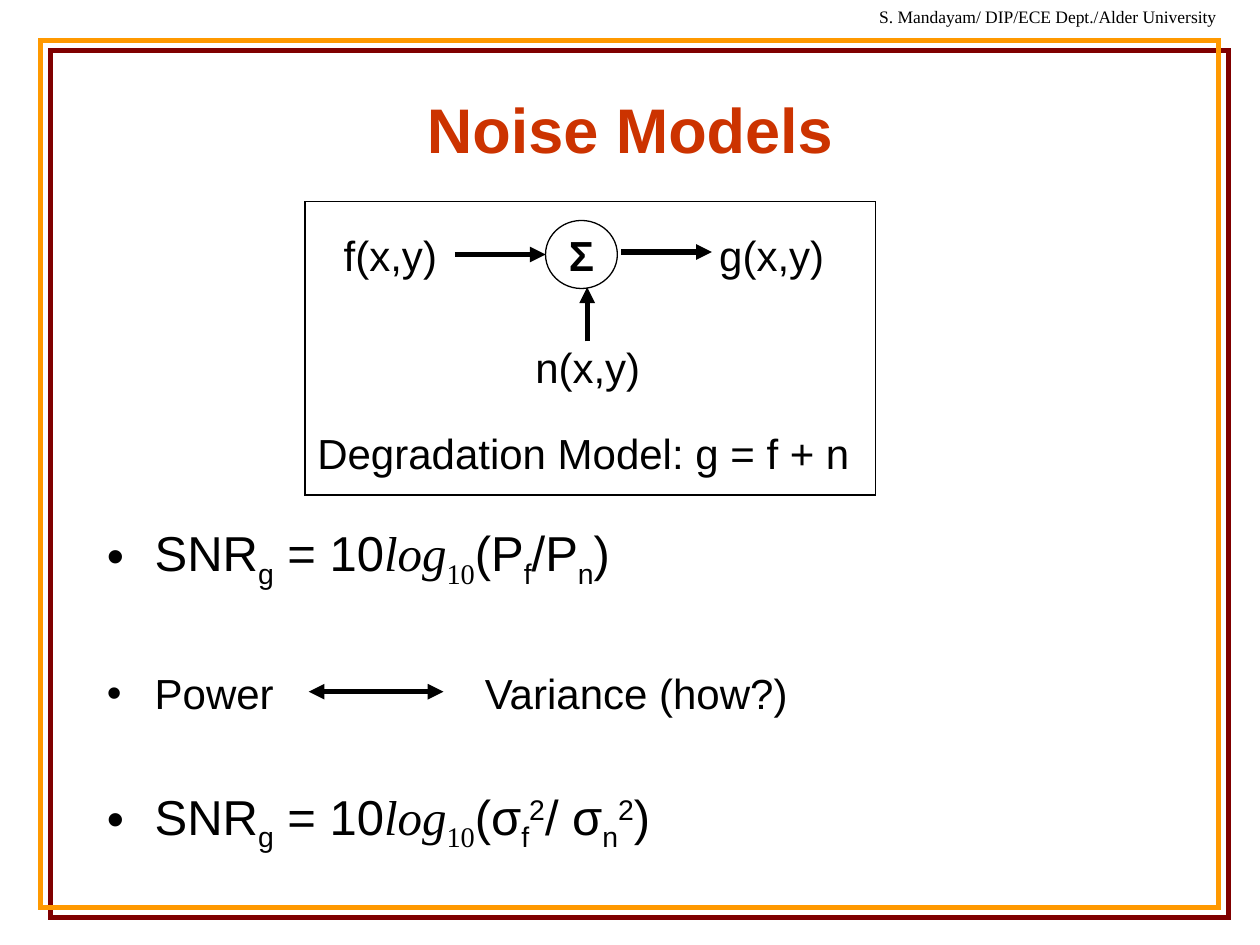
from dataclasses import dataclass
from typing import NamedTuple

from lxml import etree
from pptx import Presentation
from pptx.dml.color import RGBColor
from pptx.enum.shapes import MSO_CONNECTOR, MSO_SHAPE
from pptx.enum.text import MSO_ANCHOR, PP_ALIGN
from pptx.oxml.ns import qn
from pptx.util import Inches, Pt

STRAIGHT = MSO_CONNECTOR.STRAIGHT
RECTANGLE, OVAL = MSO_SHAPE.RECTANGLE, MSO_SHAPE.OVAL
TOP, MIDDLE = MSO_ANCHOR.TOP, MSO_ANCHOR.MIDDLE
LEFT, CENTER = PP_ALIGN.LEFT, PP_ALIGN.CENTER


@dataclass(frozen=True)
class Theme:
    ink: str = "000000"
    title: str = "CC3300"
    frame: str = "FF9900"
    frame_shadow: str = "800000"
    sans: str = "Arial"
    serif: str = "Times New Roman"
    header_size: int = 10
    label_size: int = 24
    formula_size: int = 28
    title_size: int = 36
    thin: float = 0.75
    thick: float = 3


THEME = Theme()


class Box(NamedTuple):
    left: float
    top: float
    width: float
    height: float


class Label(NamedTuple):
    text: str
    box: Box


class Arrow(NamedTuple):
    start: tuple[float, float]
    end: tuple[float, float]
    both_ends: bool = False


class Span(NamedTuple):
    text: str
    baseline: int = 0
    math: bool = False


class Bullet(NamedTuple):
    spans: list[Span]
    size: int
    space_before: float


def lengths(box: Box) -> list[int]:
    return [Inches(value) for value in box]


def add_span(para, text: str, *, size: float, color: str = THEME.ink, font: str = THEME.sans,
             bold: bool = False, italic: bool = False, baseline: int = 0) -> None:
    span = para.add_run()
    span.text = text
    span.font.size = Pt(size)
    span.font.name = font
    span.font.bold = bold
    span.font.italic = italic
    span.font.color.rgb = RGBColor.from_string(color)
    if baseline:
        span.font._element.set("baseline", str(baseline * 1000))


def add_text(page, text: str, box: Box, *, align=LEFT, anchor=TOP, wrap: bool = False, **style) -> None:
    frame = page.shapes.add_textbox(*lengths(box)).text_frame
    frame.word_wrap = wrap
    frame.vertical_anchor = anchor
    para = frame.paragraphs[0]
    para.alignment = align
    add_span(para, text, **style)


def add_outline(page, kind, box: Box, color: str, width: float):
    shape = page.shapes.add_shape(kind, *lengths(box))
    shape.shadow.inherit = False
    shape.fill.background()
    shape.line.color.rgb = RGBColor.from_string(color)
    shape.line.width = Pt(width)
    outline = shape._element.spPr.find(qn("a:ln"))
    etree.SubElement(outline, qn("a:miter"), lim="800000")
    return shape


def add_arrow(page, arrow: Arrow) -> None:
    line = page.shapes.add_connector(
        STRAIGHT, *[Inches(value) for value in arrow.start + arrow.end])
    line.line.color.rgb = RGBColor.from_string(THEME.ink)
    line.line.width = Pt(THEME.thick)
    properties = line._element.spPr
    outline = properties.find(qn("a:ln"))
    for tag in ("a:headEnd", "a:tailEnd") if arrow.both_ends else ("a:tailEnd",):
        etree.SubElement(outline, qn(tag), type="triangle")
    etree.SubElement(properties, qn("a:effectLst"))


def add_bullet(para, bullet: Bullet) -> None:
    para.space_before = Pt(bullet.space_before)
    properties = para._p.get_or_add_pPr()
    properties.set("marL", str(Inches(0.38)))
    properties.set("indent", str(Inches(-0.38)))
    etree.SubElement(properties, qn("a:buFont"), typeface=THEME.sans)
    etree.SubElement(properties, qn("a:buChar"), char="•")
    tabs = etree.SubElement(properties, qn("a:tabLst"))
    for stop in TAB_STOPS:
        etree.SubElement(tabs, qn("a:tab"), pos=str(Inches(stop)), algn="l")
    for span in bullet.spans:
        add_span(para, span.text, size=bullet.size, baseline=span.baseline, italic=span.math and not span.baseline,
                 font=THEME.serif if span.math else THEME.sans)


def snr_formula(ratio: list[Span]) -> list[Span]:
    return [Span("SNR"), Span("g", SUB), Span(" = 10"),
            Span("log", math=True), Span("10", SUB, math=True), *ratio, Span(")")]


SUB, SUPER = -25, 30
TAB_STOPS = (2, 3)

FRAME = Box(0.32, 0.32, 9.35, 6.88)
SHADOW_OFFSET = 0.08
SUM_NODE = Box(4.33, 1.75, 0.57, 0.54)
MODEL_BORDER = Box(2.42, 1.6, 4.53, 2.33)

LABELS = [
    Label("f(x,y)", Box(2.63, 1.77, 0.94, 0.5)),
    Label("g(x,y)", Box(5.61, 1.77, 1.03, 0.5)),
    Label("n(x,y)", Box(4.15, 2.66, 1.03, 0.5)),
    Label("Degradation Model: g = f + n", Box(2.42, 3.34, 4.43, 0.5)),
]
ARROWS = [
    Arrow((3.61, 2.02), (4.33, 2.02)),
    Arrow((4.66, 2.71), (4.66, 2.28)),
    Arrow((4.93, 2), (5.65, 2)),
    Arrow((2.45, 5.49), (3.52, 5.49), both_ends=True),
]
POWER_RATIO = [Span("(P"), Span("f", SUB), Span("/P"), Span("n", SUB)]
VARIANCE_RATIO = [Span("(σ"), Span("f", SUB), Span("2", SUPER),
                  Span("/ σ"), Span("n", SUB), Span("2", SUPER)]
BULLETS = [
    Bullet(snr_formula(POWER_RATIO), THEME.formula_size, 5.6),
    Bullet([Span("Power \t\tVariance (how?)")], THEME.label_size, 44.5),
    Bullet(snr_formula(VARIANCE_RATIO), THEME.formula_size, 39),
]


def main() -> None:
    deck = Presentation()
    deck.slide_width, deck.slide_height = Inches(10), Inches(7.5)
    page = deck.slides.add_slide(deck.slide_layouts[6])

    # Double frame and header
    offset_frame = FRAME._replace(left=FRAME.left + SHADOW_OFFSET, top=FRAME.top + SHADOW_OFFSET)
    add_outline(page, RECTANGLE, offset_frame, THEME.frame_shadow, THEME.thick)
    add_outline(page, RECTANGLE, FRAME, THEME.frame, THEME.thick)
    add_text(page, "S. Mandayam/ DIP/ECE Dept./Alder University", Box(6.88, 0, 2.97, 0.27),
             size=THEME.header_size, font=THEME.serif)

    # Title
    add_text(page, "Noise Models", Box(0.75, 0.67, 8.5, 0.7), align=CENTER, anchor=MIDDLE,
             wrap=True, size=THEME.title_size, color=THEME.title, bold=True)

    # Formulas
    body = page.shapes.add_textbox(*lengths(Box(0.75, 4.1, 8.5, 2.91))).text_frame
    body.word_wrap = True
    for index, bullet in enumerate(BULLETS):
        add_bullet(body.add_paragraph() if index else body.paragraphs[0], bullet)

    # Degradation model
    add_outline(page, RECTANGLE, MODEL_BORDER, THEME.ink, THEME.thin)
    for label in LABELS:
        add_text(page, label.text, label.box, size=THEME.label_size)
    node = add_outline(page, OVAL, SUM_NODE, THEME.ink, THEME.thin).text_frame
    node.word_wrap = False
    node.vertical_anchor = MIDDLE
    node.paragraphs[0].alignment = CENTER
    add_span(node.paragraphs[0], "Σ", size=THEME.label_size, bold=True)

    # Signal arrows and the power-variance link
    for arrow in ARROWS:
        add_arrow(page, arrow)

    deck.save("out.pptx")


if __name__ == "__main__":
    main()
